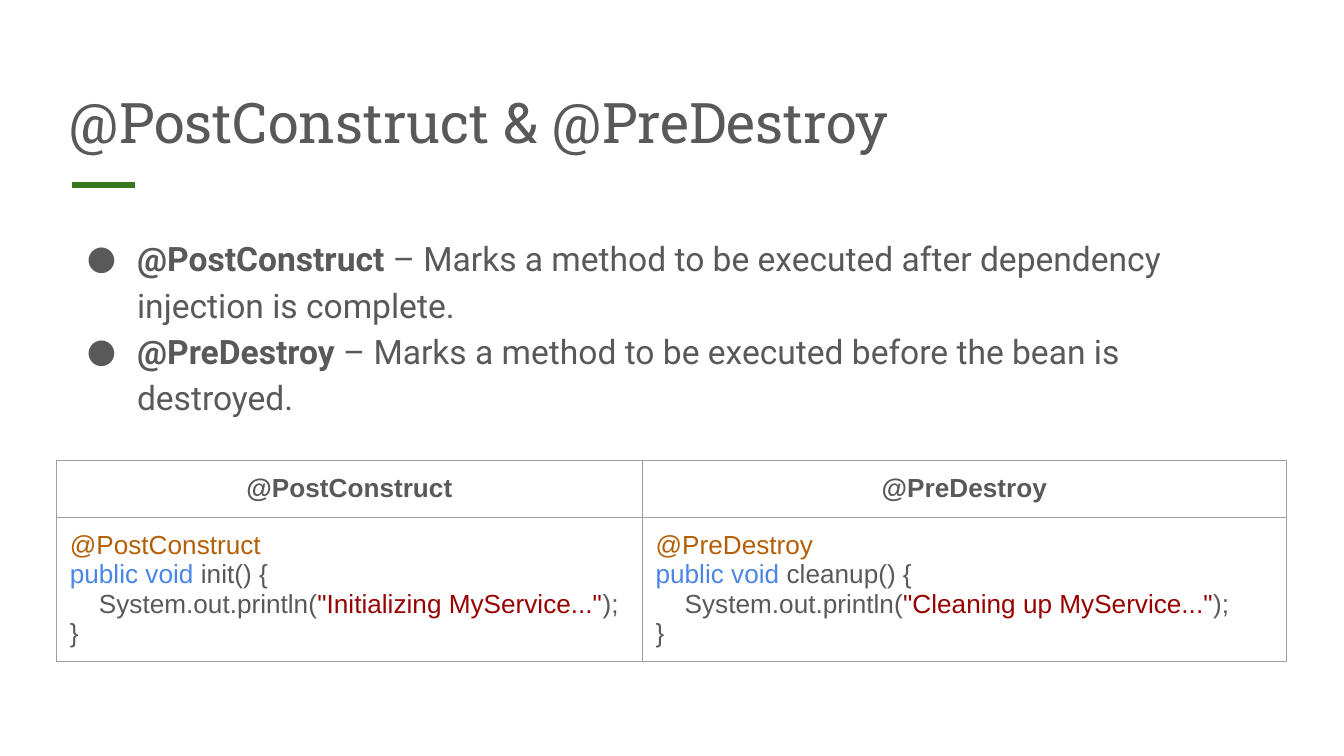
"""Builds a slide that explains the @PostConstruct and @PreDestroy annotations."""
from lxml.etree import SubElement
from pptx import Presentation
from pptx.dml.color import RGBColor
from pptx.enum.shapes import MSO_CONNECTOR as Connector
from pptx.enum.text import MSO_ANCHOR as Anchor, MSO_AUTO_SIZE as AutoSize, PP_ALIGN as Align
from pptx.oxml import parse_xml
from pptx.oxml.ns import nsdecls, qn
from pptx.util import Cm, Pt

COLORS = {
    "text": "595959",
    "accent": "38761D",
    "border": "9E9E9E",
    "annotation": "B45F06",
    "keyword": "4A86E8",
    "string": "980000",
}
INSET = Cm(0.25)


def add_text(para, text, font="Arial", size=14, color="text", bold=False):
    """Append one formatted run to a paragraph."""
    span = para.add_run()
    span.text = text
    span.font.name = font
    span.font.size = Pt(size)
    span.font.bold = bold
    span.font.color.rgb = RGBColor.from_string(COLORS[color])


def next_para(frame, index):
    """Return the first paragraph of a frame, or a new one after it."""
    return frame.paragraphs[0] if index == 0 else frame.add_paragraph()


def code_lines(annotation, method, message):
    """Return the code of a lifecycle method as lines of (text, color) pieces."""
    return [
        [(annotation, "annotation")],
        [("public void", "keyword"), (f" {method}() {{", "text")],
        [("System.out.println(", "text"), (f'"{message}"', "string"), (");", "text")],
        [("}", "text")],
    ]


class SlideBuilder:
    """Holds the style and the current slide."""

    def __init__(self, deck):
        self.page = deck.slides.add_slide(deck.slide_layouts[1])
        self.left, self.width = Cm(1.07), Cm(23.24)

    def place(self, box, top, height, anchor):
        """Position a placeholder and return its text frame."""
        box.left, box.top, box.width, box.height = self.left, top, self.width, height
        frame = box.text_frame
        frame.word_wrap = True
        frame.auto_size = AutoSize.NONE
        frame.vertical_anchor = anchor
        frame.margin_left = frame.margin_right = INSET
        frame.margin_top = frame.margin_bottom = INSET
        return frame

    def title(self, text):
        """Fill the title placeholder."""
        frame = self.place(self.page.shapes.title, Cm(1.27), Cm(1.9), Anchor.BOTTOM)
        para = frame.paragraphs[0]
        para.alignment = Align.LEFT
        add_text(para, text, font="Roboto Slab", size=30)

    def accent_line(self, start, end, top):
        """Draw the short rule under the title."""
        line = self.page.shapes.add_connector(Connector.STRAIGHT, start, top, end, top)
        line.line.color.rgb = RGBColor.from_string(COLORS["accent"])
        line.line.width = Pt(3)
        SubElement(line._element.spPr, qn("a:effectLst"))

    def bullets(self, items):
        """Fill the body placeholder with a bold term and its meaning per bullet."""
        frame = self.place(self.page.placeholders[1], Cm(4.14), Cm(8.56), Anchor.TOP)
        for index, (term, meaning) in enumerate(items):
            para = next_para(frame, index)
            para.line_spacing = 1.15
            para.space_before = Pt(0)
            add_text(para, term, font="Roboto", size=18, bold=True)
            add_text(para, f" – {meaning}", font="Roboto", size=18)
            props = para._p.get_or_add_pPr()
            props.set("marL", str(Cm(1.27)))
            props.set("indent", str(Cm(-0.95)))
            color = SubElement(props, qn("a:buClr"))
            SubElement(color, qn("a:srgbClr"), val=COLORS["text"])
            SubElement(props, qn("a:buFont"), typeface="Roboto")
            SubElement(props, qn("a:buChar"), char="●")

    def format_cell(self, cell):
        """Clear the fill, set the margins and draw the four borders of a cell."""
        cell.fill.background()
        cell.margin_left = cell.margin_right = INSET
        cell.margin_top = cell.margin_bottom = INSET
        props = cell._tc.get_or_add_tcPr()
        for index, side in enumerate(("lnL", "lnR", "lnT", "lnB")):
            props.insert(index, parse_xml(
                f'<a:{side} {nsdecls("a")} w="{Pt(0.75)}"><a:solidFill>'
                f'<a:srgbClr val="{COLORS["border"]}"/></a:solidFill></a:{side}>'))

    def code_table(self, top, widths, heights, columns):
        """Add a table with a heading and a code sample in each column."""
        grid = self.page.shapes.add_table(
            len(heights), len(widths), self.left, top, sum(widths), sum(heights)).table
        grid.first_row = grid.horz_banding = False
        for row, height in zip(grid.rows, heights):
            row.height = height
        for number, (width, (heading, lines)) in enumerate(zip(widths, columns)):
            grid.columns[number].width = width
            head, body = grid.cell(0, number), grid.cell(1, number)
            self.format_cell(head)
            self.format_cell(body)
            para = head.text_frame.paragraphs[0]
            para.alignment = Align.CENTER
            add_text(para, heading, bold=True)
            for index, pieces in enumerate(lines):
                para = next_para(body.text_frame, index)
                if pieces[0][0].startswith("System"):
                    para._p.get_or_add_pPr().set("marL", str(Cm(0.55)))
                for text, color in pieces:
                    add_text(para, text, color=color)


def main():
    """Build and save the deck."""
    deck = Presentation()
    deck.slide_width, deck.slide_height = Cm(25.4), Cm(14.29)
    builder = SlideBuilder(deck)
    post, pre = "@PostConstruct", "@PreDestroy"
    builder.accent_line(Cm(1.36), Cm(2.55), Cm(3.5))
    builder.title(f"{post} & {pre}")
    builder.bullets([
        (post, "Marks a method to be executed after dependency injection is complete."),
        (pre, "Marks a method to be executed before the bean is destroyed."),
    ])
    builder.code_table(Cm(8.71), [Cm(11.07), Cm(12.17)], [Cm(1.07), Cm(2.72)], [
        (post, code_lines(post, "init", "Initializing MyService...")),
        (pre, code_lines(pre, "cleanup", "Cleaning up MyService...")),
    ])
    deck.save("out.pptx")


if __name__ == "__main__":
    main()
